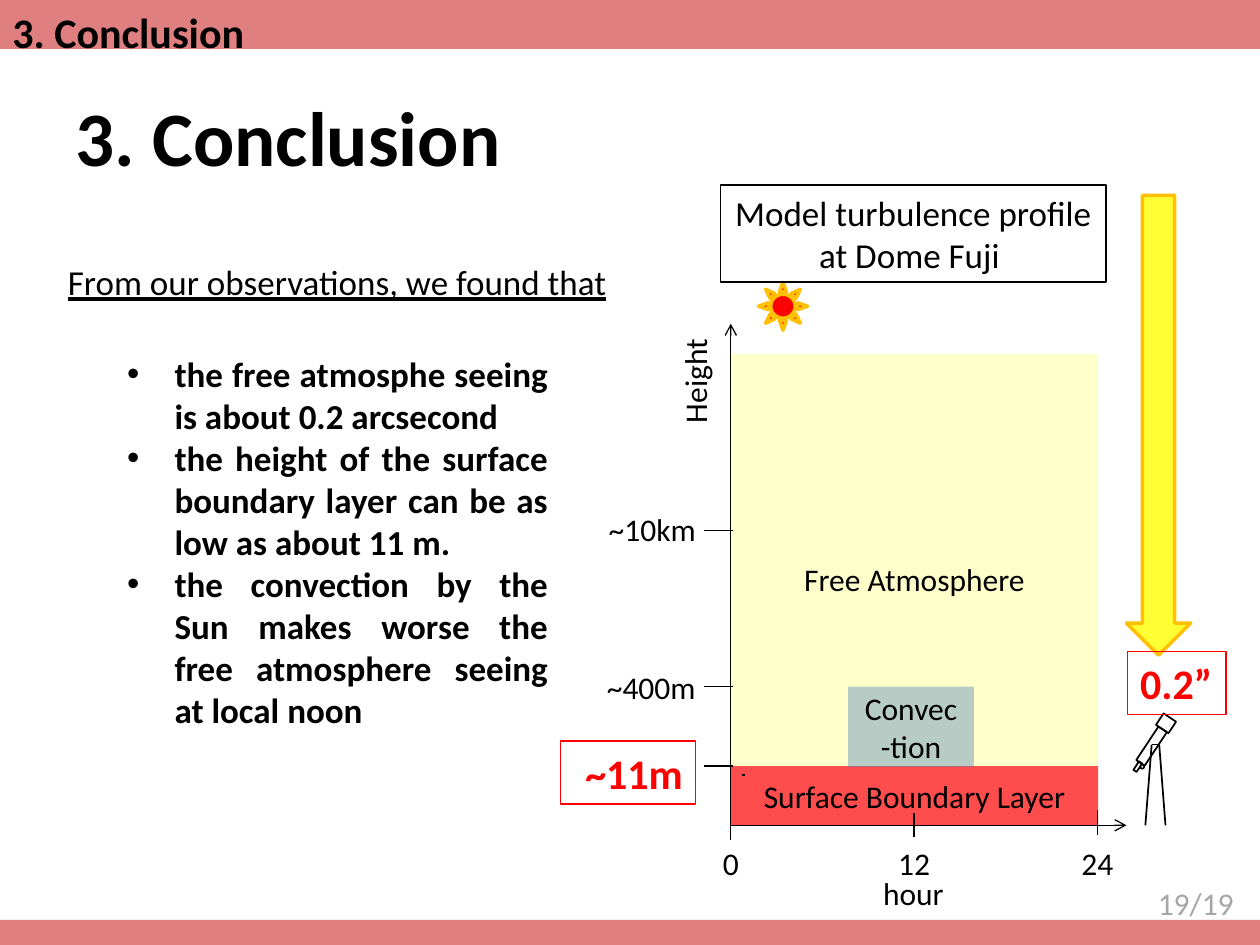
"""Build the conclusion slide with a model turbulence profile diagram."""
from dataclasses import dataclass
from typing import Optional

from lxml import etree
from pptx import Presentation
from pptx import util as u
from pptx.dml.color import RGBColor
from pptx.enum import shapes, text
from pptx.oxml.ns import qn

COLORS = {"black": "000000", "gray": "A6A6A6", "band": "C00000", "red": "FF0000",
          "yellow": "FFFF00", "gold": "FFC000", "blue": "4F81BD"}
FONT = "Calibri"
SHAPE = shapes.MSO_SHAPE
LEFT, CENTER, RIGHT, JUSTIFY = (text.PP_ALIGN.LEFT, text.PP_ALIGN.CENTER,
                                text.PP_ALIGN.RIGHT, text.PP_ALIGN.JUSTIFY)
MIDDLE, TOP = text.MSO_ANCHOR.MIDDLE, text.MSO_ANCHOR.TOP
AXIS_X, AXIS_Y, DAY_STEP, LAYER_W = 417.6, 471.6, 104.75, 210


@dataclass
class Style:
    size: float = 18
    color: str = "black"
    bold: bool = False
    underline: bool = False
    align: text.PP_ALIGN = LEFT
    anchor: text.MSO_ANCHOR = TOP


@dataclass
class Label:
    words: str
    box: tuple
    style: Style
    wrap: bool = True
    border: Optional[str] = None
    rotation: float = 0


@dataclass
class Block:
    box: tuple
    kind: shapes.MSO_SHAPE = SHAPE.RECTANGLE
    fill: Optional[str] = None
    opacity: int = 100
    line: Optional[str] = None
    width: float = 1
    rotation: float = 0
    words: str = ""
    top_inset: float = 3.6


@dataclass
class Line:
    start: tuple
    end: tuple
    width: float = 0.75
    arrow: bool = False


def rgb(name: str) -> RGBColor:
    return RGBColor.from_string(COLORS[name])


def points(values: tuple) -> list:
    return [u.Pt(v) for v in values]


def place(sp, box: tuple) -> None:
    sp.left, sp.top, sp.width, sp.height = points(box)


def write(tf, words: str, style: Style, wrap: bool = True) -> None:
    tf.text = words
    tf.word_wrap = wrap
    tf.auto_size = text.MSO_AUTO_SIZE.NONE
    tf.vertical_anchor = style.anchor
    for p in tf.paragraphs:
        p.alignment = style.align
        for r in p.runs:
            r.font.name, r.font.size = FONT, u.Pt(style.size)
            r.font.bold, r.font.underline = style.bold, style.underline
            r.font.color.rgb = rgb(style.color)


def draw_label(container, label: Label) -> None:
    sp = container.add_textbox(*points(label.box))
    sp.rotation = label.rotation
    if label.border:
        sp.line.color.rgb, sp.line.width = rgb(label.border), u.Pt(0.75)
    write(sp.text_frame, label.words, label.style, label.wrap)


def draw_block(container, block: Block) -> None:
    sp = container.add_shape(block.kind, *points(block.box))
    sp.shadow.inherit = False
    sp.rotation = block.rotation
    if block.fill:
        sp.fill.solid()
        sp.fill.fore_color.rgb = rgb(block.fill)
        if block.opacity < 100:
            color = sp.fill._xPr.find(qn("a:solidFill"))[0]
            etree.SubElement(color, qn("a:alpha"), val=str(block.opacity * 1000))
    else:
        sp.fill.background()
    if block.line:
        sp.line.color.rgb, sp.line.width = rgb(block.line), u.Pt(block.width)
    else:
        sp.line.fill.background()
    if block.words:
        write(sp.text_frame, block.words, Style(align=CENTER, anchor=MIDDLE))
        sp.text_frame.margin_top = u.Pt(block.top_inset)


def draw_line(container, line: Line) -> None:
    cx = container.add_connector(shapes.MSO_CONNECTOR.STRAIGHT, *points(line.start + line.end))
    cx.line.color.rgb, cx.line.width = rgb("black"), u.Pt(line.width)
    if line.arrow:
        etree.SubElement(cx.line._get_or_add_ln(), qn("a:tailEnd"), type="arrow")
    etree.SubElement(cx._element.spPr, qn("a:effectLst"))


def fill_placeholders(s) -> None:
    title, body = s.shapes.title, s.placeholders[1]
    place(title, (36, 32.4, 648, 90))
    write(title.text_frame, "3. Conclusion", Style(44, bold=True, anchor=MIDDLE))
    place(body, (65.5, 196.6, 254.9, 225.4))
    findings = ("the free atmosphe seeing is about 0.2 arcsecond ",
                "the height of the surface boundary layer can be as low as about 11 m.",
                "the convection by the Sun makes worse the free atmosphere seeing at local noon")
    write(body.text_frame, "\n".join(findings),
          Style(20, bold=True, align=JUSTIFY, anchor=MIDDLE))
    for p in body.text_frame.paragraphs:
        p.space_before = u.Pt(0)
        pPr = p._p.get_or_add_pPr()
        pPr.set("marL", str(u.Pt(27)))
        pPr.set("indent", str(-u.Pt(27)))
        etree.SubElement(pPr, qn("a:buFont"), typeface="Arial")
        etree.SubElement(pPr, qn("a:buChar"), char="•")


def draw_profile(container) -> None:
    draw_block(container, Block((AXIS_X, 437.8, LAYER_W, 33.8), fill="red", opacity=70,
                                words="Surface Boundary Layer"))
    for end in ((AXIS_X, 185), (643.7, AXIS_Y)):
        draw_line(container, Line((AXIS_X, AXIS_Y), end, arrow=True))
    draw_line(container, Line((424, 442.8), (425.5, 442.8)))
    draw_block(container, Block((AXIS_X, 202.3, LAYER_W, 235.5), fill="yellow", opacity=20,
                                words="Free Atmosphere", top_inset=25.6))
    draw_block(container, Block((484.6, 392.4, 72, 46), fill="blue", opacity=40,
                                words="Convec-tion"))
    for y in (303.1, 392.4, 437.8):
        draw_line(container, Line((419, y), (402.5, y)))
    for i, hour in enumerate(("0", "12", "24")):
        x, top = AXIS_X + i * DAY_STEP, 465.8 - 1.4 * i
        draw_line(container, Line((x, top), (x, top + 14)))
        draw_label(container, Label(hour, (x - 16.5, 478.8, 33, 29), Style(align=CENTER), False))


def draw_telescope(container) -> None:
    for box, kind in (((662.4, 409, 7.9, 8.6), SHAPE.RECTANGLE),
                      ((647.3, 437, 5.8, 2.2), SHAPE.RECTANGLE),
                      ((651.6, 437, 2.2, 2.2), SHAPE.OVAL),
                      ((646.6, 423.4, 23, 5.8), SHAPE.RECTANGLE)):
        draw_block(container, Block(box, kind, line="black", rotation=303.5))
    tripod = ((654.5, 471.6), (658.1, 425.5), (662.4, 425.5), (666, 471.6))
    for start, end in zip(tripod, tripod[1:]):
        draw_line(container, Line(start, end, 1))


def main() -> None:
    prs = Presentation()
    prs.slide_width, prs.slide_height = u.Pt(720), u.Pt(540)
    s = prs.slides.add_slide(prs.slide_layouts[1])
    fill_placeholders(s)
    for top, height in ((525.6, 14.4), (0, 28)):
        draw_block(s.shapes, Block((0, top, 720, height), fill="band", opacity=50))
    draw_profile(s.shapes)
    draw_telescope(s.shapes.add_group_shape().shapes)
    draw_block(s.shapes, Block((643.7, 111.6, 36.7, 262.8), SHAPE.DOWN_ARROW, "yellow", 80,
                               "gold", 2))
    draw_block(s.shapes, Block((433.4, 161.3, 28.1, 27.4), SHAPE.SUN, "red", 100, "gold", 2))
    right, alert = Style(align=RIGHT), Style(24, "red", True)
    labels = (
        Label("19/19", (654.5, 501.8, 61.2, 29), Style(color="gray"), False),
        Label("Height", (362.2, 199.4, 69.8, 29), Style(), rotation=270),
        Label("~10km", (333.4, 288, 71.3, 29), right),
        Label("~400m", (320.4, 378, 84.2, 29), right),
        Label("~11m", (320.4, 423.4, 77, 36), Style(24, "red", True, align=RIGHT), border="red"),
        Label("0.2”", (644.4, 372.2, 56.2, 36), alert, False, "red"),
        Label("hour", (497.5, 496.1, 49.7, 29), Style(), False),
        Label("Model turbulence profile\nat Dome Fuji ", (411.8, 105.8, 220.3, 55.4),
              Style(20, align=CENTER), False, "black"),
        Label("From our observations, we found that", (31.7, 145.4, 333.4, 31.7),
              Style(20, underline=True)),
        Label("3. Conclusion", (0, 0, 148.3, 36), Style(24, bold=True), False),
    )
    for label in labels:
        draw_label(s.shapes, label)
    prs.save("out.pptx")


if __name__ == "__main__":
    main()
